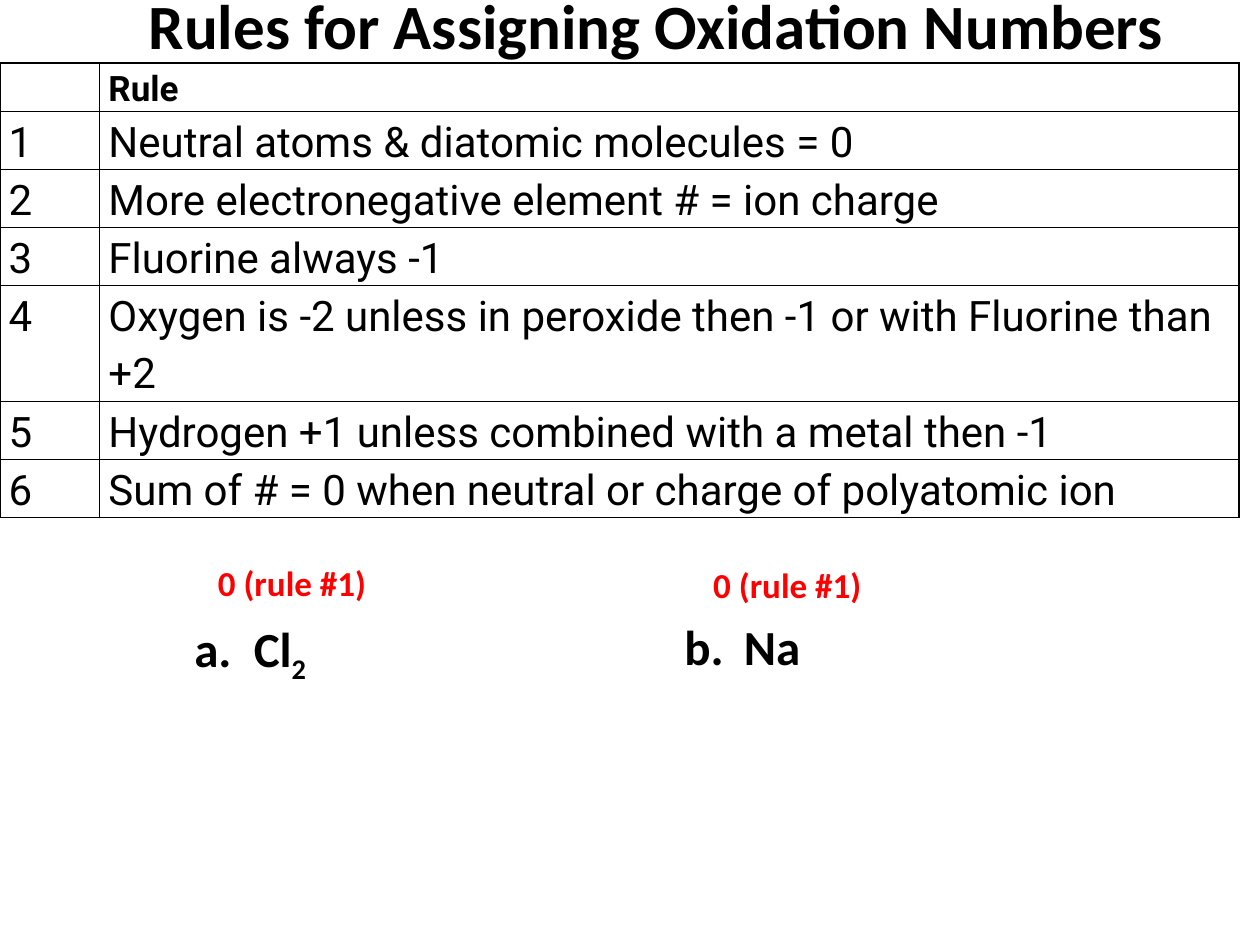
from pptx import Presentation
from pptx.dml.color import RGBColor
from pptx.enum.text import MSO_ANCHOR, PP_ALIGN
from pptx.oxml import parse_xml
from pptx.oxml.ns import nsdecls
from pptx.util import Pt

BLACK, WHITE, RED = "000000", "FFFFFF", "FF0000"
RULES = [
    "Neutral atoms & diatomic molecules = 0",
    "More electronegative element # = ion charge",
    "Fluorine always -1",
    "Oxygen is -2 unless in peroxide then -1 or with Fluorine than +2",
    "Hydrogen +1 unless combined with a metal then -1",
    "Sum of # = 0 when neutral or charge of polyatomic ion",
]


def rgb(color):
    return RGBColor.from_string(color)


def add_run(p, text, size, color=BLACK, name="Calibri", bold=True):
    r = p.add_run()
    r.text = text
    for key, value in dict(size=Pt(size), name=name, bold=bold).items():
        setattr(r.font, key, value)
    r.font.color.rgb = rgb(color)
    return r


def add_text(s, box, wrap=True):
    tf = s.shapes.add_textbox(*map(Pt, box)).text_frame
    tf.word_wrap = wrap
    return tf


def add_title(s, box):
    tf = add_text(s, box)
    tf.vertical_anchor = MSO_ANCHOR.MIDDLE
    tf.margin_top = tf.margin_bottom = 0
    p = tf.paragraphs[0]
    p.alignment = PP_ALIGN.CENTER
    add_run(p, "Rules for Assigning Oxidation Numbers", 36)


def style_cell(cell):
    formats = dict(margin_left=Pt(5), margin_right=Pt(5), margin_top=0, margin_bottom=0)
    for key, value in formats.items():
        setattr(cell, key, value)
    cell.fill.solid()
    cell.fill.fore_color.rgb = rgb(WHITE)
    for i, side in enumerate("LRTB"):
        cell._tc.get_or_add_tcPr().insert(i, parse_xml(
            f'<a:ln{side} {nsdecls("a")} w="{Pt(1)}"><a:solidFill>'
            f'<a:srgbClr val="{BLACK}"/></a:solidFill></a:ln{side}>'))


def add_rules(s, box):
    rows = [("", "Rule")] + [(str(i), rule) for i, rule in enumerate(RULES, 1)]
    table = s.shapes.add_table(len(rows), 2, *map(Pt, box)).table
    number_width = 57
    table.columns[0].width = Pt(number_width)
    table.columns[1].width = Pt(box[2] - number_width)
    for i, row in enumerate(rows):
        table.rows[i].height = Pt({0: 24.5, 4: 54}.get(i, 33))
        for j, text in enumerate(row):
            cell = table.cell(i, j)
            style_cell(cell)
            p = cell.text_frame.paragraphs[0]
            p.line_spacing = 1.15
            if text:
                add_run(p, text, 24 if i else 20, name="Roboto", bold=i == 0)


def add_example(s, box, letter, formula, subscript=""):
    p = add_text(s, box).paragraphs[0]
    pPr = p._p.get_or_add_pPr()
    pPr.set("marL", str(Pt(40)))
    pPr.set("indent", str(Pt(-34)))
    add_run(p, f"{letter}.\t{formula}", 28)
    if subscript:
        r = add_run(p, subscript, 28)
        r.font._element.set("baseline", "-25000")


def add_answer(s, box):
    add_run(add_text(s, box, wrap=False).paragraphs[0], "0 (rule #1)", 20, RED)


def main():
    prs = Presentation()
    prs.slide_width, prs.slide_height = Pt(720), Pt(540)
    s = prs.slides.add_slide(prs.slide_layouts[6])
    add_title(s, (54, 0, 642, 28))
    add_rules(s, (0, 36, 708, 261.5))
    add_example(s, (98, 350, 102, 41), "a", "Cl", "2")
    add_answer(s, (117.5, 317.5, 100, 31.5))
    add_example(s, (378, 348.5, 102, 41), "b", "Na")
    add_answer(s, (400.5, 318.5, 100, 31.5))
    prs.save("out.pptx")


if __name__ == "__main__":
    main()
